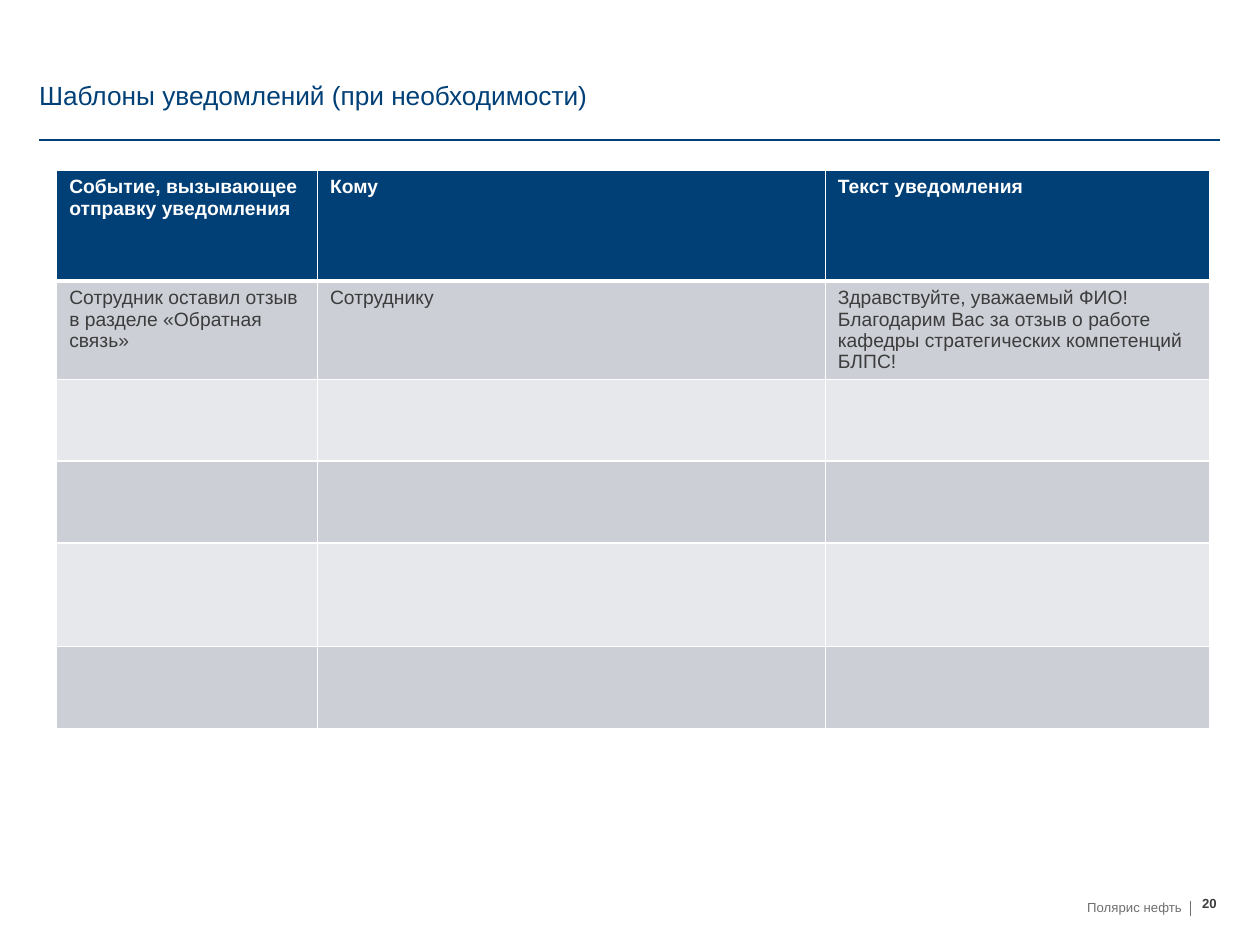
from lxml.etree import SubElement
from pptx import Presentation
from pptx.dml.color import RGBColor
from pptx.enum.shapes import MSO_CONNECTOR
from pptx.enum.text import MSO_ANCHOR, MSO_AUTO_SIZE, PP_ALIGN
from pptx.oxml.ns import qn
from pptx.util import Inches, Pt

NAVY = RGBColor(0x00, 0x40, 0x77)
DARK = RGBColor(0x3C, 0x3C, 0x3C)
GREY = RGBColor(0x70, 0x6F, 0x6F)
WHITE = RGBColor(0xFF, 0xFF, 0xFF)
BANDS = [RGBColor(0xE7, 0xE8, 0xEC), RGBColor(0xCC, 0xCF, 0xD6)]

COL_WIDTHS = [2.07, 4.03, 3.05]
ROW_HEIGHTS = [0.88, 0.78, 0.65, 0.65, 0.82, 0.65]
ROWS = [
    ["Событие, вызывающее отправку уведомления", "Кому", "Текст уведомления"],
    ["Сотрудник оставил отзыв в разделе «Обратная связь»", "Сотруднику",
     "Здравствуйте, уважаемый ФИО!\n"
     "Благодарим Вас за отзыв о работе кафедры стратегических компетенций БЛПС!"],
]


class SlideBuilder:
    font = "Arial"

    def __init__(self, slide):
        self.s = slide

    def add_runs(self, tf, text, size, color, bold=False, align=PP_ALIGN.LEFT):
        for i, line in enumerate(text.split("\n")):
            p = tf.add_paragraph() if i else tf.paragraphs[0]
            p.alignment = align
            r = p.add_run()
            r.text = line
            r.font.name, r.font.size, r.font.bold = self.font, Pt(size), bold
            r.font.color.rgb = color

    def frame(self, sp, anchor):
        tf = sp.text_frame
        tf.margin_left = tf.margin_right = tf.margin_top = tf.margin_bottom = 0
        tf.word_wrap = True
        tf.auto_size = MSO_AUTO_SIZE.NONE
        tf.vertical_anchor = anchor
        return tf

    def title(self, text, x, y, w, h):
        sp = self.s.shapes.title
        sp.left, sp.top, sp.width, sp.height = map(Inches, (x, y, w, h))
        self.add_runs(self.frame(sp, MSO_ANCHOR.BOTTOM), text, 15, NAVY)

    def text(self, text, x, y, w, h, color, anchor=MSO_ANCHOR.TOP, **style):
        sp = self.s.shapes.add_textbox(*map(Inches, (x, y, w, h)))
        self.add_runs(self.frame(sp, anchor), text, 7.5, color, **style)

    def line(self, x1, y1, x2, y2, color, width):
        sp = self.s.shapes.add_connector(
            MSO_CONNECTOR.STRAIGHT, *map(Inches, (x1, y1, x2, y2)))
        sp.line.color.rgb = color
        sp.line.width = Pt(width)
        SubElement(sp._element.spPr, qn("a:effectLst"))

    def borders(self, cell, widths):
        # Borders come before the fill in the cell properties
        tc_pr = cell._tc.get_or_add_tcPr()
        for i, (side, width) in enumerate(widths.items()):
            ln = SubElement(tc_pr, qn(f"a:ln{side}"), w=str(Pt(width)))
            fill = SubElement(ln, qn("a:solidFill"))
            SubElement(fill, qn("a:srgbClr"), val=str(WHITE))
            tc_pr.insert(i, ln)

    def table(self, rows, x, y, widths, heights):
        table = self.s.shapes.add_table(
            len(heights), len(widths),
            *map(Inches, (x, y, sum(widths), sum(heights)))).table
        for col, width in zip(table.columns, widths):
            col.width = Inches(width)
        for i, height in enumerate(heights):
            table.rows[i].height = Inches(height)
            header = i == 0
            for j, cell in enumerate(table.rows[i].cells):
                self.borders(cell, {"L": 1, "R": 1, "T": 3 if i == 1 else 1,
                                    "B": 3 if header else 1})
                cell.fill.solid()
                cell.fill.fore_color.rgb = NAVY if header else BANDS[i % 2]
                if i < len(rows):
                    self.add_runs(cell.text_frame, rows[i][j], 11,
                                  WHITE if header else DARK, bold=header)


def main():
    prs = Presentation()
    prs.slide_width, prs.slide_height = Inches(10), Inches(7.5)
    b = SlideBuilder(prs.slides.add_slide(prs.slide_layouts[5]))

    # Heading with rule
    b.title("Шаблоны уведомлений (при необходимости)", 0.31, 0.21, 9.36, 0.67)
    b.line(0.31, 1.11, 9.68, 1.11, NAVY, 1)

    # Notification templates
    b.table(ROWS, 0.45, 1.35, COL_WIDTHS, ROW_HEIGHTS)

    # Footer
    b.text("Полярис нефть", 5.94, 7.11, 3.44, 0.18, GREY,
           anchor=MSO_ANCHOR.MIDDLE, align=PP_ALIGN.RIGHT)
    b.line(9.45, 7.15, 9.45, 7.27, GREY, 0.75)
    b.text("20", 9.54, 7.11, 0.24, 0.18, DARK, bold=True)

    prs.save("out.pptx")


if __name__ == "__main__":
    main()
